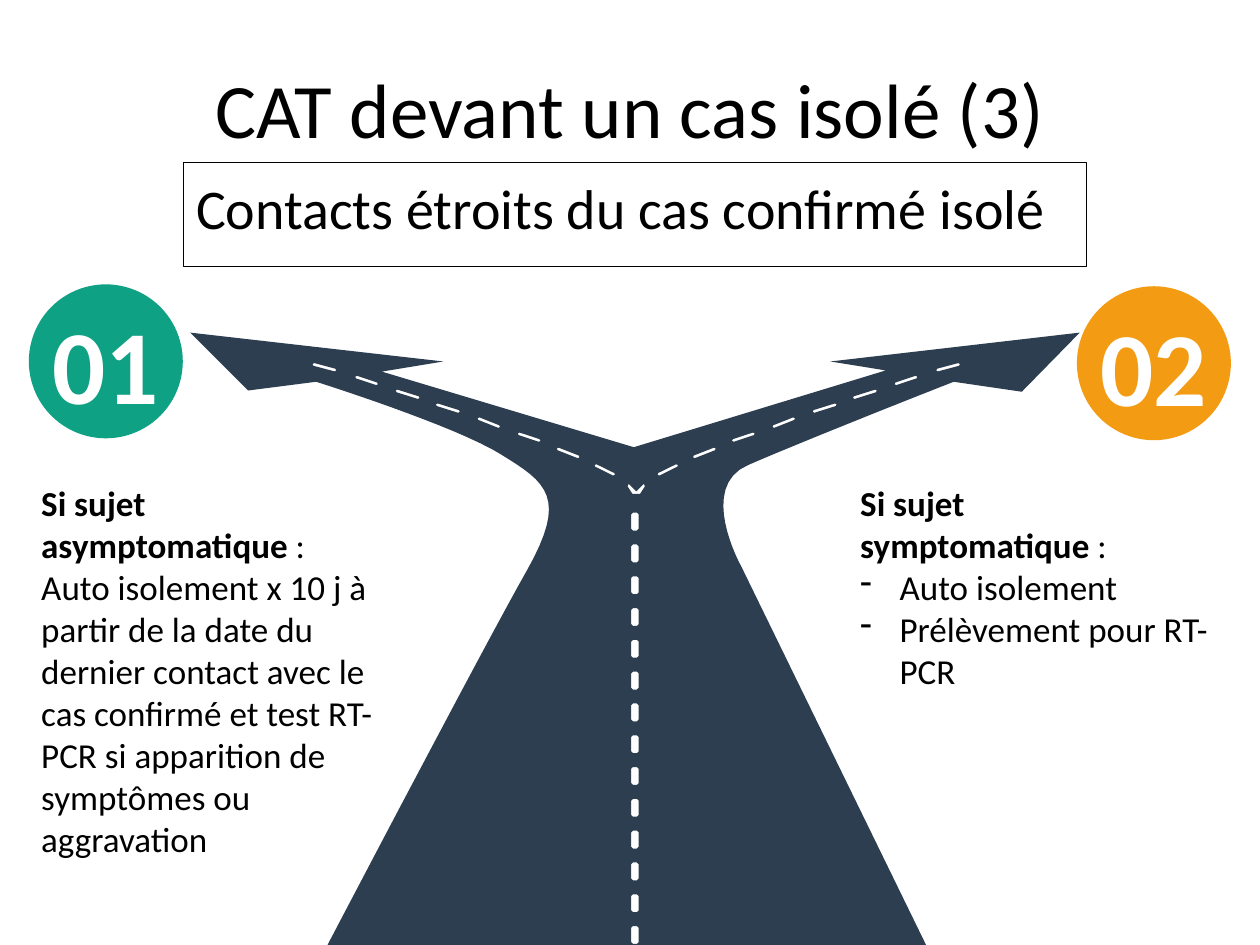
import math

from lxml import etree
from pptx import Presentation
from pptx.dml.color import RGBColor
from pptx.enum.shapes import MSO_SHAPE
from pptx.enum.text import MSO_ANCHOR, MSO_AUTO_SIZE, PP_ALIGN
from pptx.oxml.ns import qn
from pptx.util import Pt

OVAL, RECTANGLE = MSO_SHAPE.OVAL, MSO_SHAPE.RECTANGLE
TOP, BOTTOM = MSO_ANCHOR.TOP, MSO_ANCHOR.BOTTOM
LEFT, CENTER = PP_ALIGN.LEFT, PP_ALIGN.CENTER
NO_FIT = MSO_AUTO_SIZE.NONE

COLORS = {"road": "2C3E50", "green": "0FA184", "orange": "F39B13", "white": "FFFFFF", "black": "000000"}
FONT = "Calibri"
ROAD_AXIS = 363.6

LEFT_DASHES = [
    ((178.6, 208.1), (192.2, 211.7)),
    ((203, 215.3), (216, 219.6)),
    ((226.1, 223.2), (239.8, 227.5)),
    ((249.1, 231.1), (262.8, 235.4)),
    ((272.9, 239), (285.8, 244.1)),
    ((295.9, 247.7), (308.9, 252)),
    ((318.2, 256.3), (331.2, 261.4)),
    ((339.8, 265.7), (351.4, 271.4)),
]
FORK_MARK = [(368.6, 277.9), (365.8, 282.2), (361.4, 282.2), (358.6, 277.9),
             (359.3, 276.5), (363.6, 280.8), (367.9, 276.5)]


def curve(start, pull_out, pull_in, end, steps=16):
    points = []
    for step in range(1, steps + 1):
        t = step / steps
        weights = ((1 - t) ** 3, 3 * t * (1 - t) ** 2, 3 * t * t * (1 - t), t ** 3)
        corners = (start, pull_out, pull_in, end)
        points.append(tuple(sum(w * c[axis] for w, c in zip(weights, corners)) for axis in (0, 1)))
    return points


def road_edge():
    left_turn, left_bend, left_neck = (180.7, 218.2), (286.6, 259.9), (301, 326.2)
    left_foot, right_foot = (187.2, 540), (529.2, 540)
    right_neck, right_bend, right_turn = (423.4, 323.3), (427.7, 265.7), (545, 218.2)
    return [
        (474.5, 206.6), (506.2, 211.7), (362.2, 255.6), (218.2, 212.4),
        (253.4, 206.6), (108.7, 190.1), (141.8, 223.2), left_turn,
        *curve(left_turn, left_turn, (260.6, 243.4), left_bend),
        *curve(left_bend, (312.5, 275.8), (324.7, 284.4), left_neck),
        *curve(left_neck, (276.5, 369.4), left_foot, left_foot),
        right_foot, right_neck,
        *curve(right_neck, right_neck, (398.2, 277.9), right_bend),
        *curve(right_bend, (464.4, 249.8), right_turn, right_turn),
        (583.9, 223.9), (617, 190.1),
    ]


def slanted_dash(start, end, half=0.8):
    (x1, y1), (x2, y2) = start, end
    length = math.hypot(x2 - x1, y2 - y1)
    along_x, along_y = half * (x2 - x1) / length, half * (y2 - y1) / length
    return [
        (x1, y1),
        (x1 + along_x + along_y, y1 + along_y - along_x),
        (x2 - along_x + along_y, y2 - along_y - along_x),
        (x2, y2),
        (x2 - along_x - along_y, y2 - along_y + along_x),
        (x1 + along_x - along_y, y1 + along_y + along_x),
    ]


def upright_dash(top, left=360.7, right=365, height=10.2, bevel=1):
    bottom = top + height
    return [
        (left, top + bevel), (left + bevel, top), (right - bevel, top), (right, top + bevel),
        (right, bottom - bevel), (right - bevel, bottom), (left + bevel, bottom), (left, bottom - bevel),
    ]


def road_contours():
    contours = [road_edge(), FORK_MARK]
    for start, end in LEFT_DASHES:
        contours.append(slanted_dash(start, end))
        contours.append(slanted_dash(*((2 * ROAD_AXIS - x, y) for x, y in (start, end))))
    contours.extend(upright_dash(293 + 18.17 * row) for row in range(14))
    return contours


class SlideWriter:
    def __init__(self, page):
        self.page = page

    def color(self, name):
        return RGBColor.from_string(COLORS[name])

    def format(self, para, size, color="black", align=LEFT):
        para.alignment = align
        para.font.name = FONT
        para.font.size = Pt(size)
        para.font.color.rgb = self.color(color)

    def place(self, box, left, top, width, height):
        box.left, box.top, box.width, box.height = (Pt(v) for v in (left, top, width, height))

    def title(self, text, *bounds):
        box = self.page.shapes.title
        self.place(box, *bounds)
        frame = box.text_frame
        frame.text = text
        frame.auto_size = NO_FIT
        frame.vertical_anchor = TOP
        self.format(frame.paragraphs[0], 44, align=CENTER)

    def outline(self, contours, fill):
        first, *others = [[(x * 100, y * 100) for x, y in contour] for contour in contours]
        builder = self.page.shapes.build_freeform(*first[0], scale=Pt(0.01))
        builder.add_line_segments(first[1:])
        for contour in others:
            builder.move_to(*contour[0])
            builder.add_line_segments(contour[1:])
        self.paint(builder.convert_to_shape(), fill)

    def paint(self, shape, fill):
        shape.shadow.inherit = False
        shape.fill.solid()
        shape.fill.fore_color.rgb = self.color(fill)
        shape.line.fill.background()

    def badge(self, number, fill, left, top):
        circle = self.page.shapes.add_shape(OVAL, Pt(left), Pt(top), Pt(88), Pt(88))
        self.paint(circle, fill)
        label = self.page.shapes.add_textbox(Pt(left + 6), Pt(top + 4), Pt(76), Pt(80))
        frame = label.text_frame
        frame.word_wrap = False
        frame.vertical_anchor = BOTTOM
        frame.text = number
        para = frame.paragraphs[0]
        self.format(para, 60, "white", CENTER)
        para.font.bold = True

    def framed(self, text, *bounds):
        box = self.page.shapes.add_shape(RECTANGLE, *(Pt(v) for v in bounds))
        box.shadow.inherit = False
        box.fill.background()
        box.line.color.rgb = self.color("black")
        box.line.width = Pt(0.75)
        frame = box.text_frame
        frame.vertical_anchor = TOP
        frame.margin_top = Pt(6)
        frame.text = text
        self.format(frame.paragraphs[0], 32)

    def advice(self, heading, lines, bulleted, *bounds):
        box = self.page.shapes.add_textbox(*(Pt(v) for v in bounds))
        frame = box.text_frame
        frame.word_wrap = True
        para = frame.paragraphs[0]
        span = para.add_run()
        span.text = heading
        span.font.bold = True
        para.add_run().text = " :"
        self.format(para, 20)
        for line in lines:
            para = frame.add_paragraph()
            para.text = line
            if bulleted:
                self.bullet(para)
            self.format(para, 20)

    def bullet(self, para, indent=22.5):
        properties = para._p.get_or_add_pPr()
        properties.set("marL", str(Pt(indent)))
        properties.set("indent", str(-Pt(indent)))
        etree.SubElement(properties, qn("a:buChar"), char="-")


def main():
    deck = Presentation()
    deck.slide_width, deck.slide_height = Pt(720), Pt(540)
    writer = SlideWriter(deck.slides.add_slide(deck.slide_layouts[5]))
    writer.title("CAT devant un cas isolé (3)", 36, 31.7, 648, 90)
    writer.outline(road_contours(), "road")
    writer.badge("01", "green", 16.5, 162.5)
    writer.badge("02", "orange", 615.4, 163.6)
    writer.advice(
        "Si sujet asymptomatique",
        ["Auto isolement x 10 j à partir de la date du dernier contact avec le cas confirmé "
         "et test RT-PCR si apparition de symptômes ou aggravation"],
        False, 16.5, 271.4, 219, 225.4)
    writer.advice("Si sujet symptomatique", ["Auto isolement", "Prélèvement pour RT-PCR"],
                  True, 484.5, 271.4, 219, 128.2)
    writer.framed("Contacts étroits du cas confirmé isolé", 105, 92.9, 516, 59.4)
    deck.save("out.pptx")


if __name__ == "__main__":
    main()
